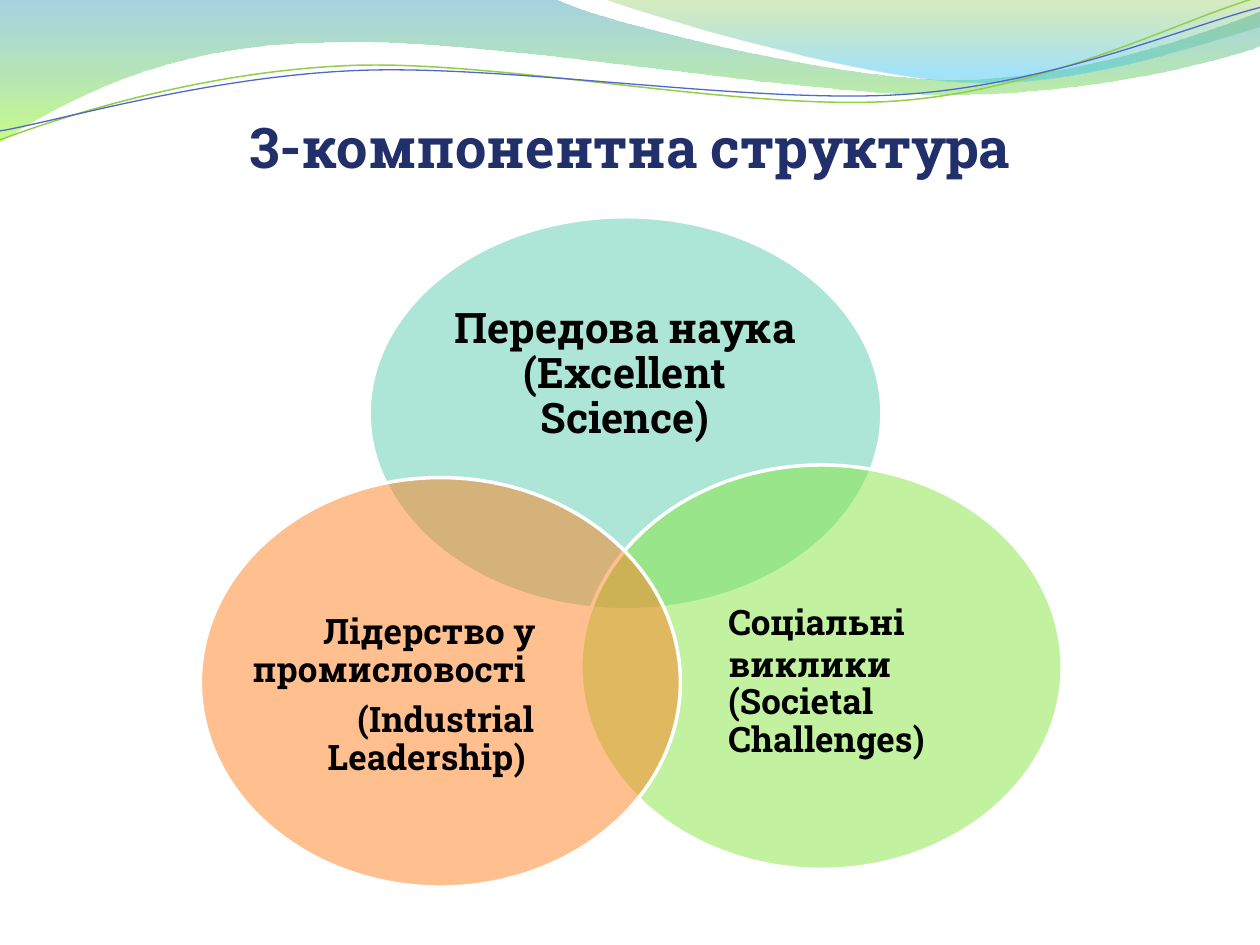
"""Build a slide with a three-circle overlap diagram under a wavy header."""
import math

import pptx
import pptx.dml.color
import pptx.enum.shapes
import pptx.enum.text
import pptx.oxml
import pptx.oxml.ns
import pptx.util

Inches, Pt = pptx.util.Inches, pptx.util.Pt
ALIGN = pptx.enum.text.PP_ALIGN
ANCHOR = pptx.enum.text.MSO_ANCHOR

THEME = {
    "font": "Roboto Slab",
    "title": "21306A", "body": "000000", "outline": "FFFFFF",
    "teal": "5DCEAF", "lime": "86E640", "orange": "FF8021",
    "sky": ("3B9CBF", 45), "meadow": ("9CFA24", 55),
    "leaf": ("7EBE2C", 30), "lagoon": ("39C1F1", 45),
    "green_stroke": ("93CE48", 0.85), "blue_stroke": ("4E67C8", 0.75),
    "title_size": 32, "large": 24, "small": 20,
    "circle_alpha": 50, "outline_width": 2,
}

TITLE = "3-компонентна структура"
TITLE_BOX = (0.5, 0.84, 9, 6.08)

COMPONENTS = [
    {"circle": (2.93, 1.72, 4.07, 3.12), "color": "teal",
     "label": (3.47, 2.27, 2.98, 1.41), "size": "large", "align": ALIGN.CENTER,
     "lines": [("Передова наука (Excellent Science)", 0.9, 8.4)]},
    {"circle": (4.61, 3.69, 3.82, 3.21), "color": "lime",
     "label": (5.78, 4.52, 2.29, 1.76), "size": "small", "align": ALIGN.LEFT,
     "lines": [("Соціальні виклики", None, 0), ("(Societal Challenges)", 0.9, 7)]},
    {"circle": (1.59, 3.79, 3.81, 3.25), "color": "orange",
     "label": (1.95, 4.63, 2.29, 1.79), "size": "small", "align": ALIGN.RIGHT,
     "lines": [("Лідерство у промисловості ", 0.9, 7),
               ("(Industrial Leadership) ", 0.9, 7)]},
]

# Each step is a line end (x, y) or a Bezier (x1, y1, x2, y2, x, y).
WAVES = [
    {"start": (0, -0.01),
     "steps": [(4.4, -0.01), (4.76, 0.17, 6.64, 0.63, 7.58, 0.63),
               (8.53, 0.63, 9.58, 0.26, 10, 0.09), (10.01, 0.36),
               (9.83, 0.44, 8.7, 0.76, 7.46, 0.75),
               (6.22, 0.75, 3.82, 0.28, 2.57, 0.34),
               (1.29, 0.35, 0.46, 0.83, -0.01, 1.13), (0, -0.01)],
     "gradient": [(0, "sky"), (1, "meadow")]},
    {"start": (4.79, -0.01),
     "steps": [(5.09, 0.11, 6.82, 0.62, 7.69, 0.65),
               (8.56, 0.69, 9.61, 0.32, 10, 0.21), (10, 0), (4.79, -0.01)],
     "gradient": [(0, "leaf"), (0.8, "lagoon")]},
    {"start": (0, 1.11), "center": (4.99, 0.58), "tilt": -2.7,
     "steps": [(0.48, 0.93, 1.58, 0.57, 2.77, 0.52),
               (3.95, 0.47, 5.93, 0.89, 7.13, 0.8),
               (8.33, 0.71, 9.38, 0.15, 9.98, -0.02)],
     "stroke": "green_stroke"},
    {"start": (0, 1.04), "center": (5, 0.59), "tilt": -2.7,
     "steps": [(0.47, 0.96, 1.64, 0.61, 2.83, 0.56),
               (4.03, 0.51, 5.97, 0.83, 7.17, 0.75),
               (8.36, 0.67, 9.41, 0.21, 10, 0.06)],
     "stroke": "blue_stroke"},
]


def rgb(value):
    return pptx.dml.color.RGBColor.from_string(value)


def set_alphas(shape, alphas):
    colors = shape._element.spPr.iter(pptx.oxml.ns.qn("a:srgbClr"))
    for color, alpha in zip(colors, alphas):
        color.append(pptx.oxml.parse_xml(
            f'<a:alpha {pptx.oxml.ns.nsdecls("a")} val="{alpha * 1000}"/>'))


def set_stroke(shape, color, width):
    shape.line.color.rgb = rgb(color)
    shape.line.width = Pt(width)


def turn(point, center, degrees):
    angle = math.radians(degrees)
    dx, dy = point[0] - center[0], point[1] - center[1]
    return (center[0] + dx * math.cos(angle) - dy * math.sin(angle),
            center[1] + dx * math.sin(angle) + dy * math.cos(angle))


def curve_segments(shape, steps):
    segments = iter(list(shape._element.spPr.iter(pptx.oxml.ns.qn("a:lnTo"))))
    for step in steps:
        first = next(segments)
        if len(step) == 6:
            curve = pptx.oxml.parse_xml(
                f'<a:cubicBezTo {pptx.oxml.ns.nsdecls("a")}/>')
            first.addprevious(curve)
            for segment in (first, next(segments), next(segments)):
                curve.append(segment[0])
                segment.getparent().remove(segment)


def add_wave(slide, start, steps, gradient=None, stroke=None, center=(0, 0), tilt=0):
    points = [start] + [step[i:i + 2] for step in steps for i in range(0, len(step), 2)]
    points = [tuple(map(Inches, turn(point, center, -tilt))) for point in points]
    builder = slide.shapes.build_freeform(*points[0])
    builder.add_line_segments(points[1:], close=bool(gradient))
    wave = builder.convert_to_shape()
    curve_segments(wave, steps)
    wave.rotation = tilt
    wave.shadow.inherit = False
    if gradient:
        wave.fill.gradient()
        wave.fill.gradient_angle = 270
        for stop, (position, name) in zip(wave.fill.gradient_stops, gradient):
            stop.position = position
            stop.color.rgb = rgb(THEME[name][0])
        set_alphas(wave, [THEME[name][1] for _, name in gradient])
        wave.line.fill.background()
    else:
        wave.fill.background()
        set_stroke(wave, *THEME[stroke])


def add_circle(slide, box, color):
    circle = slide.shapes.add_shape(
        pptx.enum.shapes.MSO_SHAPE.OVAL, *map(Inches, box))
    circle.shadow.inherit = False
    circle.fill.solid()
    circle.fill.fore_color.rgb = rgb(color)
    set_alphas(circle, [THEME["circle_alpha"]])
    set_stroke(circle, THEME["outline"], THEME["outline_width"])


def add_text(slide, lines, *, box, size, color, align,
             anchor=ANCHOR.MIDDLE, inset=(0, 0)):
    frame = slide.shapes.add_textbox(*map(Inches, box)).text_frame
    frame.word_wrap = True
    frame.vertical_anchor = anchor
    frame.margin_left = frame.margin_right = Inches(inset[0])
    frame.margin_top = frame.margin_bottom = Inches(inset[1])
    for i, (text, spacing, after) in enumerate(lines):
        paragraph = frame.add_paragraph() if i else frame.paragraphs[0]
        paragraph.alignment = align
        paragraph.line_spacing = spacing
        paragraph.space_after = Pt(after)
        run = paragraph.add_run()
        run.text = text
        run.font.name = THEME["font"]
        run.font.size = Pt(size)
        run.font.bold = True
        run.font.color.rgb = rgb(color)


def main():
    deck = pptx.Presentation()
    deck.slide_width, deck.slide_height = Inches(10), Inches(7.5)
    slide = deck.slides.add_slide(deck.slide_layouts[6])
    for wave in WAVES:
        add_wave(slide, **wave)
    add_text(slide, [(TITLE, None, 0)], box=TITLE_BOX, size=THEME["title_size"],
             color=THEME["title"], align=ALIGN.CENTER,
             anchor=ANCHOR.TOP, inset=(0.1, 0.05))
    for part in COMPONENTS:
        add_circle(slide, part["circle"], THEME[part["color"]])
        add_text(slide, part["lines"], box=part["label"], size=THEME[part["size"]],
                 color=THEME["body"], align=part["align"])
    deck.save("out.pptx")


if __name__ == "__main__":
    main()
